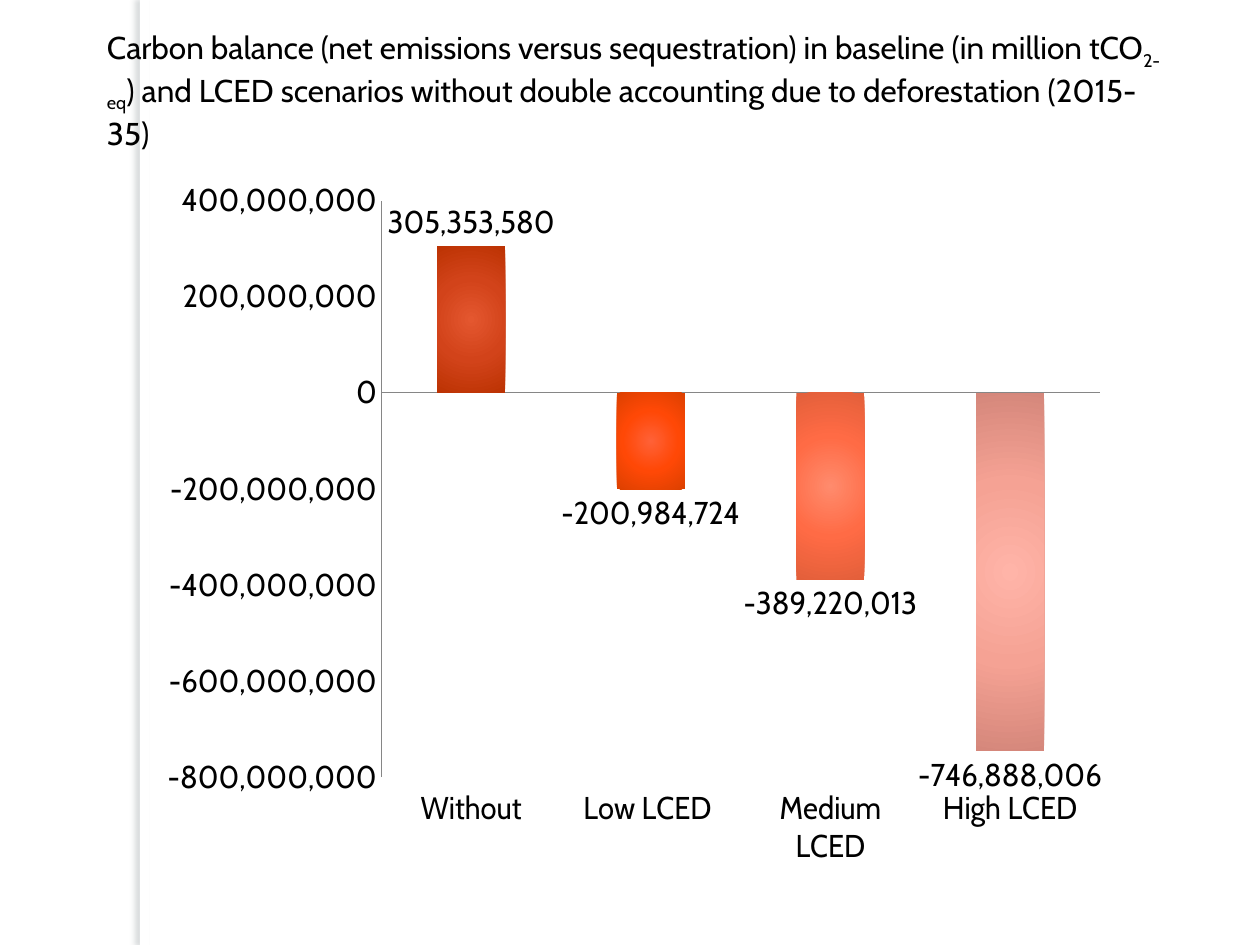
from lxml.etree import SubElement
from pptx import Presentation
from pptx.chart.data import CategoryChartData
from pptx.dml.color import RGBColor
from pptx.enum.chart import (XL_CHART_TYPE, XL_LABEL_POSITION, XL_TICK_LABEL_POSITION,
                             XL_TICK_MARK)
from pptx.enum.shapes import MSO_SHAPE
from pptx.enum.text import MSO_ANCHOR, MSO_AUTO_SIZE, PP_ALIGN
from pptx.oxml import parse_xml
from pptx.oxml.ns import nsdecls, qn
from pptx.util import Cm, Pt

# Content: title pieces with their baseline shift in percent
TITLE = [
    ("Carbon balance (net emissions versus sequestration) in baseline (in million tCO", 0),
    ("2-eq", -25),
    (") and LCED scenarios without double accounting due to deforestation (2015-35)", 0),
]
# Scenario, balance, gradient from bar centre to edge
SCENARIOS = [
    ("Without", 305353580, ("E4572F", "D2431A", "BC3303")),
    ("Low LCED ", -200984724, ("FF6137", "FF4806", "DC4000")),
    ("Medium LCED", -389220013, ("FF8B6D", "FF6B45", "E35F3A")),
    ("High LCED", -746888006, ("FFB4A8", "F5A294", "D5877B")),
]

BLACK = RGBColor(0x00, 0x00, 0x00)
WHITE = RGBColor(0xFF, 0xFF, 0xFF)
AXIS_GREY = RGBColor(0x86, 0x86, 0x86)
SHADOW_GREY = RGBColor(0x6E, 0x7A, 0x7D)
TEXT_FORMAT = {"name": "Cabin", "size": Pt(18), "bold": False}
NUMBER_FORMAT = "#,##0"
PLOT_AREA = {"x": 0.158, "y": 0.031, "w": 0.804, "h": 0.807}


def apply_format(target, values):
    for name, value in values.items():
        setattr(target, name, value)


def format_text(font):
    apply_format(font, TEXT_FORMAT)
    font.color.rgb = BLACK


def fill_radial(point, colours):
    point.format.line.fill.background()
    stops = "".join(
        f'<a:gs pos="{position}"><a:srgbClr val="{colour}"/></a:gs>'
        for position, colour in zip((0, 50000, 100000), colours))
    gradient = parse_xml(
        f'<a:gradFill {nsdecls("a")} rotWithShape="1"><a:gsLst>{stops}</a:gsLst>'
        '<a:path path="circle"><a:fillToRect l="50000" t="50000" r="50000" b="50000"/>'
        '</a:path></a:gradFill>')
    point.format.line._get_or_add_ln().addprevious(gradient)


def add_side_strip(slide, height):
    strip = slide.shapes.add_shape(MSO_SHAPE.RECTANGLE, Cm(2.82), 0, Cm(0.2), height)
    strip.fill.solid()
    strip.fill.fore_color.rgb = WHITE
    strip.line.fill.background()
    strip._element.spPr.append(parse_xml(
        f'<a:effectLst {nsdecls("a")}><a:outerShdw blurRad="{Pt(3)}" dist="{Pt(3)}" '
        f'dir="10800000" algn="ctr" rotWithShape="0"><a:srgbClr val="{SHADOW_GREY}">'
        '<a:alpha val="25000"/></a:srgbClr></a:outerShdw></a:effectLst>'))


def add_balance_chart(slide):
    balance = CategoryChartData(number_format=NUMBER_FORMAT)
    balance.categories = [name for name, _, _ in SCENARIOS]
    balance.add_series("Series 1", [value for _, value, _ in SCENARIOS])
    chart = slide.shapes.add_chart(XL_CHART_TYPE.COLUMN_CLUSTERED, Cm(3.38), Cm(3.6),
                                   Cm(19.48), Cm(14.4), balance).chart
    apply_format(chart, {"has_legend": False, "has_title": False})
    format_text(chart.font)

    # Axes
    apply_format(chart.value_axis, {
        "minimum_scale": -800000000, "maximum_scale": 400000000,
        "major_unit": 200000000, "has_major_gridlines": False})
    apply_format(chart.value_axis.tick_labels,
                 {"number_format": NUMBER_FORMAT, "number_format_is_linked": False})
    chart.category_axis.tick_label_position = XL_TICK_LABEL_POSITION.LOW
    for axis in (chart.value_axis, chart.category_axis):
        apply_format(axis, {"major_tick_mark": XL_TICK_MARK.NONE,
                            "minor_tick_mark": XL_TICK_MARK.NONE})
        axis.format.line.color.rgb = AXIS_GREY
        axis.format.line.width = Pt(0.75)

    # Bars and their values
    bars = chart.plots[0]
    apply_format(bars, {"gap_width": 164, "overlap": -22,
                        "vary_by_categories": False, "has_data_labels": True})
    apply_format(bars.data_labels, {
        "show_value": True, "number_format": NUMBER_FORMAT,
        "number_format_is_linked": False, "position": XL_LABEL_POSITION.OUTSIDE_END})
    format_text(bars.data_labels.font)
    bars.series[0].invert_if_negative = False
    for index, (_, _, colours) in enumerate(SCENARIOS):
        fill_radial(bars.series[0].points[index], colours)

    # Fixed inner plot area
    plot_area = chart._chartSpace.chart.plotArea
    layout = plot_area.find(qn("c:layout"))
    if layout is None:
        layout = parse_xml(f'<c:layout {nsdecls("c")}/>')
        plot_area.insert(0, layout)
    manual = SubElement(layout, qn("c:manualLayout"))
    settings = {"layoutTarget": "inner", "xMode": "edge", "yMode": "edge", **PLOT_AREA}
    for tag, value in settings.items():
        SubElement(manual, qn(f"c:{tag}")).set("val", str(value))


def format_title(slide):
    title = slide.shapes.title
    apply_format(title, {"left": Cm(1.9), "top": Cm(0.43),
                         "width": Cm(22.02), "height": Cm(1.8)})
    apply_format(title.text_frame, {
        "word_wrap": True, "vertical_anchor": MSO_ANCHOR.TOP,
        "auto_size": MSO_AUTO_SIZE.SHAPE_TO_FIT_TEXT})
    paragraph = title.text_frame.paragraphs[0]
    paragraph.alignment = PP_ALIGN.LEFT
    for text, shift in TITLE:
        run = paragraph.add_run()
        run.text = text
        format_text(run.font)
        if shift:
            run._r.get_or_add_rPr().set("baseline", str(shift * 1000))
    # The title lies in front of the strip
    slide.shapes._spTree.append(title._element)


def main():
    deck = Presentation()
    apply_format(deck, {"slide_width": Cm(25.4), "slide_height": Cm(19.05)})
    slide = deck.slides.add_slide(deck.slide_layouts[5])
    slide.background.fill.solid()
    slide.background.fill.fore_color.rgb = WHITE
    add_side_strip(slide, deck.slide_height)
    add_balance_chart(slide)
    format_title(slide)
    deck.save("out.pptx")


if __name__ == "__main__":
    main()
